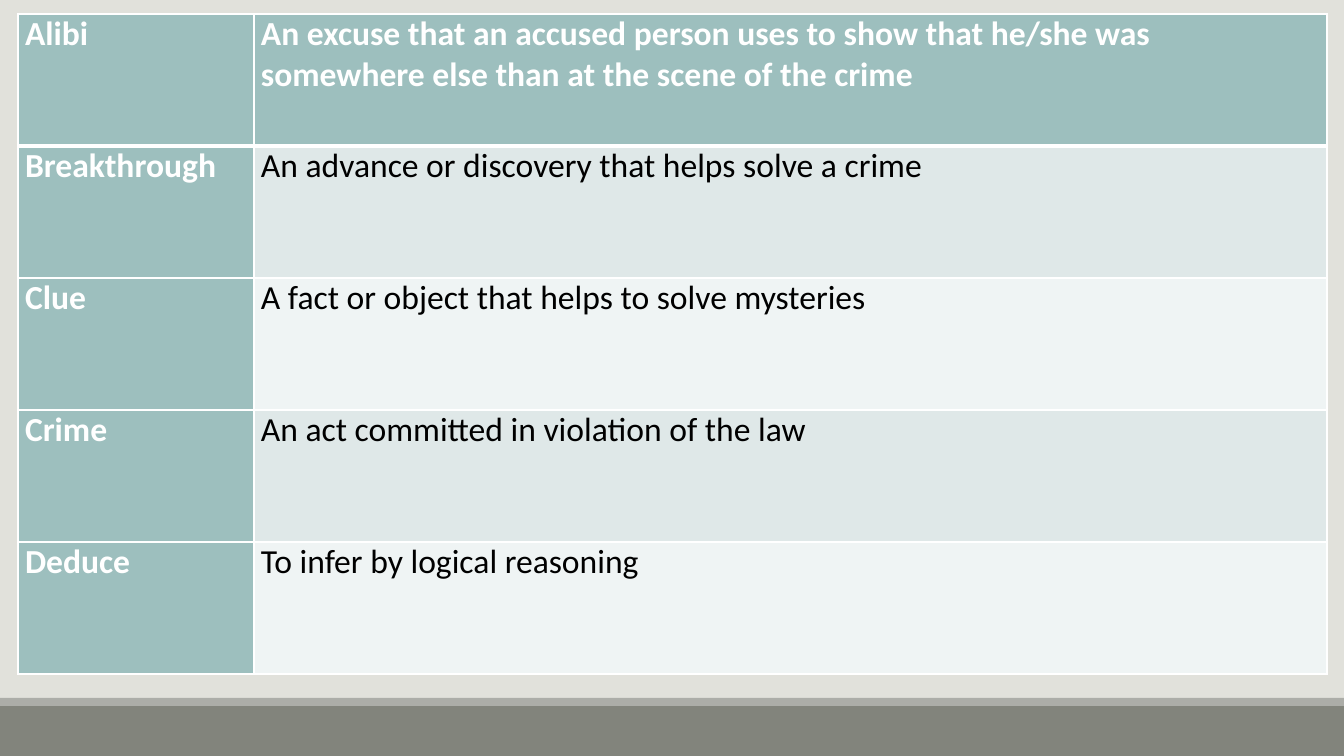
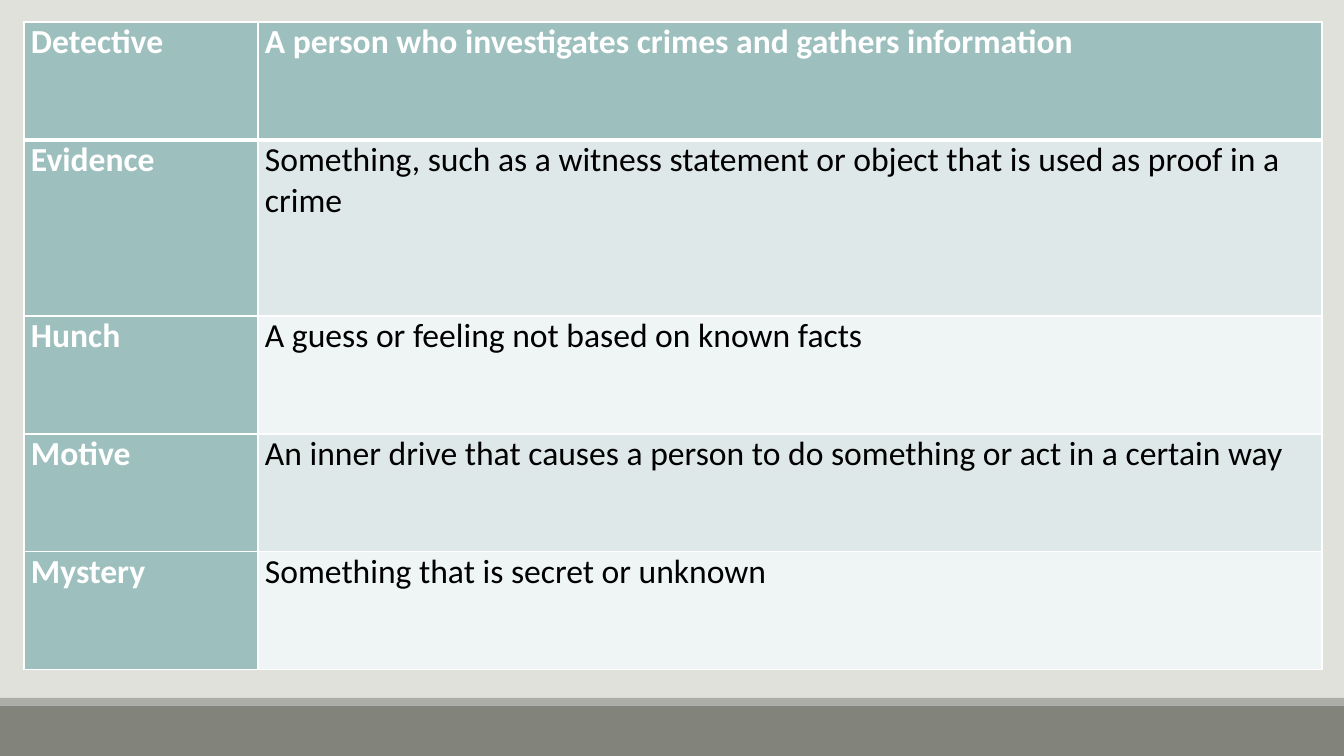
from lxml import etree
from pptx import Presentation
from pptx.dml.color import RGBColor
from pptx.enum.shapes import MSO_SHAPE
from pptx.oxml.ns import qn
from pptx.util import Emu, Pt

RECTANGLE = MSO_SHAPE.RECTANGLE

SLIDE_W, SLIDE_H = 1344, 756
EMU_PER_PX = 914400 / 100.8

BACKGROUND = "E1E1DB"
TERM_FILL = "9DBFBE"
ROW_FILLS = ["EFF4F4", "DFE8E8"]
WHITE, BLACK = "FFFFFF", "000000"
FONT = {"name": "Calibri", "size": Pt(24)}
SIDE_INSET = 7
THIN, THICK = Pt(1), Pt(3)

# top, height, colour
BANDS = [(706, 50, "82847C"), (698, 8, "ACADA8")]

GLOSSARIES = [
    {
        "corner": (18, 14),
        "columns": (236, 1073),
        "rows": (132,) * 5,
        "entries": [
            ("Alibi", "An excuse that an accused person uses to show that he/she was "
                      "somewhere else than at the scene of the crime"),
            ("Breakthrough", "An advance or discovery that helps solve a crime"),
            ("Clue", "A fact or object that helps to solve mysteries"),
            ("Crime", "An act committed in violation of the law"),
            ("Deduce", "To infer by logical reasoning"),
        ],
    },
    {
        "corner": (24, 22),
        "columns": (234, 1064),
        "rows": (118, 176, 118, 118, 118),
        "entries": [
            ("Detective", "A person who investigates crimes and gathers information"),
            ("Evidence", "Something, such as a witness statement or object that is used "
                         "as proof in a crime"),
            ("Hunch", "A guess or feeling not based on known facts"),
            ("Motive", "An inner drive that causes a person to do something or act in a "
                       "certain way"),
            ("Mystery", "Something that is secret or unknown"),
        ],
    },
]


def px(length):
    return Emu(round(length * EMU_PER_PX))


def color(hex_code):
    return RGBColor.from_string(hex_code)


def paint(fill, hex_code):
    fill.solid()
    fill.fore_color.rgb = color(hex_code)


def apply(target, values):
    for attribute, value in values.items():
        setattr(target, attribute, value)


def style_master(master, slide):
    """Set the shared background and move the bottom bands from slide to master."""
    paint(master.background.fill, BACKGROUND)
    for top, height, fill in BANDS:
        band = slide.shapes.add_shape(RECTANGLE, 0, px(top), px(SLIDE_W), px(height))
        band.shadow.inherit = False
        paint(band.fill, fill)
        band.line.fill.background()
        master.shapes.element.append(band.element)


def set_borders(cell, widths):
    """Draw white borders; the line elements must come before the cell's fill."""
    properties = cell._tc.get_or_add_tcPr()
    for index, (side, width) in enumerate(widths.items()):
        line = etree.Element(qn(f"a:ln{side}"), w=str(width))
        fill = etree.SubElement(line, qn("a:solidFill"))
        etree.SubElement(fill, qn("a:srgbClr"), val=WHITE)
        properties.insert(index, line)


def fill_cell(cell, text, row, column):
    emphasized = row == 0 or column == 0
    apply(cell, {"text": text, "margin_left": px(SIDE_INSET),
                 "margin_right": px(SIDE_INSET), "margin_top": 0, "margin_bottom": 0})
    font = cell.text_frame.paragraphs[0].runs[0].font
    apply(font, {**FONT, "bold": emphasized})
    font.color.rgb = color(WHITE if emphasized else BLACK)
    paint(cell.fill, TERM_FILL if emphasized else ROW_FILLS[row % 2])
    set_borders(cell, {"L": THIN, "R": THIN,
                       "T": THICK if row == 1 else THIN,
                       "B": THICK if row == 0 else THIN})


def add_glossary(slide, glossary):
    columns, rows = glossary["columns"], glossary["rows"]
    left, top = glossary["corner"]
    table = slide.shapes.add_table(len(rows), len(columns), px(left), px(top),
                                   px(sum(columns)), px(sum(rows))).table
    for column, width in zip(table.columns, columns):
        column.width = px(width)
    for row, height in zip(table.rows, rows):
        row.height = px(height)
    for row, entry in enumerate(glossary["entries"]):
        for column, text in enumerate(entry):
            fill_cell(table.cell(row, column), text, row, column)


def main():
    deck = Presentation()
    apply(deck, {"slide_width": px(SLIDE_W), "slide_height": px(SLIDE_H)})
    blank = deck.slide_layouts.get_by_name("Blank")
    slides = [deck.slides.add_slide(blank) for _ in GLOSSARIES]
    style_master(deck.slide_master, slides[0])
    for slide, glossary in zip(slides, GLOSSARIES):
        add_glossary(slide, glossary)
    deck.save("out.pptx")


if __name__ == "__main__":
    main()
